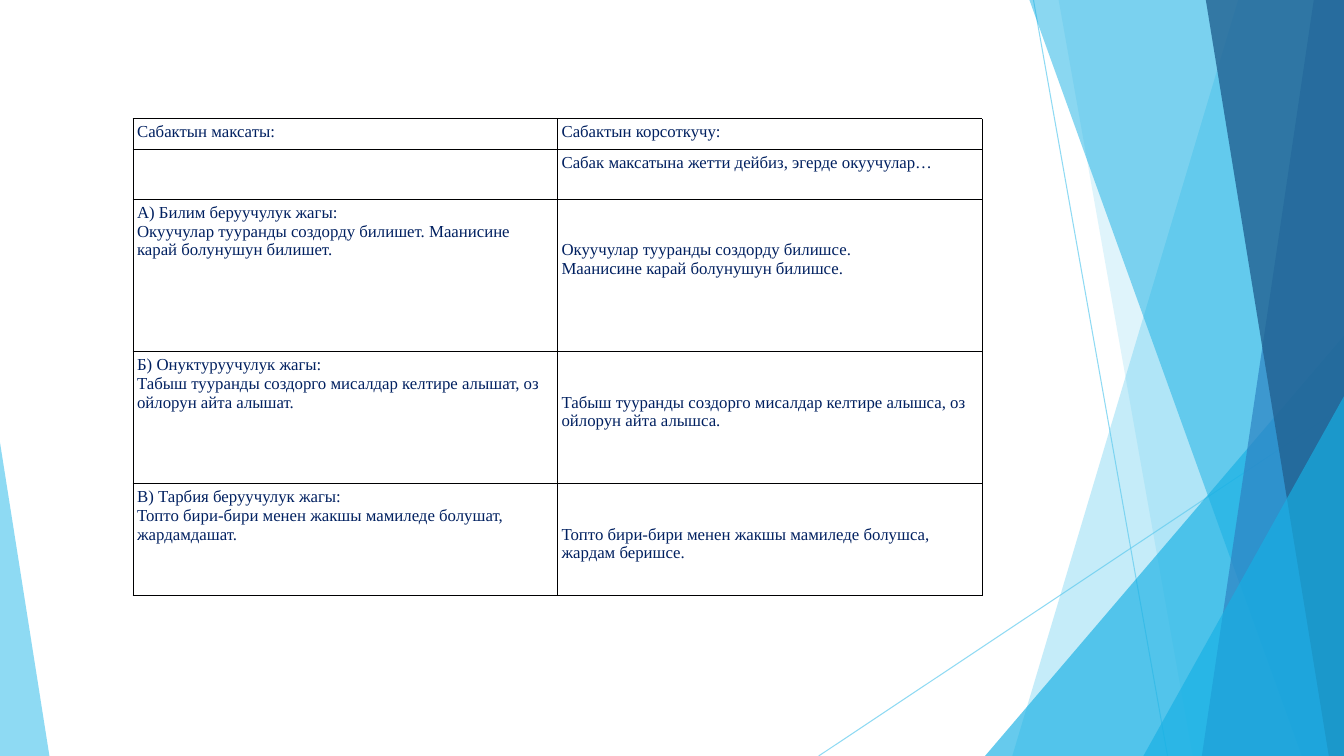
from lxml import etree
from pptx import Presentation
from pptx.dml.color import RGBColor
from pptx.enum.shapes import MSO_CONNECTOR, MSO_SHAPE
from pptx.oxml.ns import qn
from pptx.util import Inches, Pt

STRAIGHT = MSO_CONNECTOR.STRAIGHT
TRIANGLE = MSO_SHAPE.ISOSCELES_TRIANGLE
WIDTH, HEIGHT = 13.33, 7.5
SKY, CYAN, BLUE, NAVY = "5FCBEF", "17B0E4", "2E83C3", "226292"
CELL_MARGIN, LOWERED_MARGIN = 0.04, 0.41


def colour(value):
    return RGBColor.from_string(value)


class LessonSlide:
    font = "Times New Roman"
    size = Pt(12)
    ink = "002060"
    paper = "FFFFFF"
    border = "000001"

    def __init__(self, presentation):
        self.slide = presentation.slides.add_slide(presentation.slide_layouts[6])
        self.shapes = self.slide.shapes

    def set_opacity(self, shape, percent):
        for element in shape._element.spPr.iter(qn("a:srgbClr")):
            etree.SubElement(element, qn("a:alpha"), val=str(percent * 1000))

    def paint(self, shape, fill, opacity):
        shape.shadow.inherit = False
        shape.fill.solid()
        shape.fill.fore_color.rgb = colour(fill)
        shape.line.fill.background()
        self.set_opacity(shape, opacity)

    def ray(self, x1, y1, x2, y2):
        connector = self.shapes.add_connector(
            STRAIGHT, Inches(x1), Inches(y1), Inches(x2), Inches(y2))
        connector.line.color.rgb = colour(SKY)
        connector.line.width = Pt(0.75)
        self.set_opacity(connector, 70)
        etree.SubElement(connector._element.spPr, qn("a:effectLst"))

    def facet(self, top_x, bottom_x, fill, opacity):
        builder = self.shapes.build_freeform(Inches(top_x), 0)
        corners = [(WIDTH, 0), (WIDTH, HEIGHT), (bottom_x, HEIGHT)]
        builder.add_line_segments([(Inches(x), Inches(y)) for x, y in corners])
        self.paint(builder.convert_to_shape(), fill, opacity)

    def triangle(self, left, top, width, apex, fill, opacity):
        shape = self.shapes.add_shape(
            TRIANGLE, Inches(left), Inches(top), Inches(width), Inches(HEIGHT - top))
        shape.adjustments[0] = apex
        self.paint(shape, fill, opacity)

    def table(self, left, top, column_width, row_heights, rows):
        columns = len(rows[0])
        frame = self.shapes.add_table(
            len(rows), columns, Inches(left), Inches(top),
            Inches(column_width * columns), Inches(sum(row_heights)))
        table = frame.table
        table.first_row = table.horz_banding = False
        for column in table.columns:
            column.width = Inches(column_width)
        for row_index, (height, texts) in enumerate(zip(row_heights, rows)):
            table.rows[row_index].height = Inches(height)
            for column_index, lines in enumerate(texts):
                lowered = row_index > 1 and column_index == 1
                self.cell(table.cell(row_index, column_index), lines,
                          LOWERED_MARGIN if lowered else CELL_MARGIN)

    def cell(self, cell, lines, margin_top):
        cell.margin_left = cell.margin_right = cell.margin_bottom = Inches(CELL_MARGIN)
        cell.margin_top = Inches(margin_top)
        properties = cell._tc.get_or_add_tcPr()
        for side in ("lnL", "lnR", "lnT", "lnB"):
            line = etree.SubElement(properties, qn(f"a:{side}"), w=str(Pt(0.75)))
            fill = etree.SubElement(line, qn("a:solidFill"))
            etree.SubElement(fill, qn("a:srgbClr"), val=self.border)
        cell.fill.solid()
        cell.fill.fore_color.rgb = colour(self.paper)
        for index, text in enumerate(lines):
            text_frame = cell.text_frame
            paragraph = text_frame.add_paragraph() if index else text_frame.paragraphs[0]
            run = paragraph.add_run()
            run.text = text
            run.font.name = self.font
            run.font.size = self.size
            run.font.color.rgb = colour(self.ink)


ROW_HEIGHTS = [0.3, 0.5, 1.51, 1.31, 1.11]
LESSON_ROWS = [
    (["Сабактын максаты:"], ["Сабактын корсоткучу:"]),
    ([], ["Сабак максатына жетти дейбиз, эгерде окуучулар…"]),
    (["А) Билим беруучулук жагы:",
      "Окуучулар тууранды создорду билишет. Маанисине карай болунушун билишет."],
     ["Окуучулар тууранды создорду билишсе.",
      "Маанисине карай болунушун билишсе."]),
    (["Б) Онуктуруучулук жагы:",
      "Табыш тууранды создорго мисалдар келтире алышат, оз ойлорун айта алышат."],
     ["Табыш тууранды создорго мисалдар келтире алышса, оз ойлорун айта алышса."]),
    (["В) Тарбия беруучулук жагы:",
      "Топто бири-бири менен жакшы мамиледе болушат, жардамдашат."],
     ["Топто бири-бири менен жакшы мамиледе болушса, жардам беришсе."]),
]


def main():
    presentation = Presentation()
    presentation.slide_width = Inches(WIDTH)
    presentation.slide_height = Inches(HEIGHT)
    lesson = LessonSlide(presentation)
    lesson.ray(10.25, 0, 11.58, HEIGHT)
    lesson.ray(WIDTH, 4.03, 8.12, HEIGHT)
    lesson.facet(12.28, 10.04, SKY, 36)
    lesson.facet(10.5, 11.83, SKY, 20)
    lesson.triangle(9.77, 3.33, 3.56, 1, CYAN, 66)
    lesson.facet(10.21, 12.91, CYAN, 50)
    lesson.facet(13.03, 11.92, BLUE, 70)
    lesson.facet(11.96, 13.18, NAVY, 80)
    lesson.triangle(11.34, 3.93, 1.99, 1, CYAN, 66)
    lesson.triangle(0, 4.39, 0.49, 0, SKY, 70)
    lesson.table(1.32, 1.18, 4.21, ROW_HEIGHTS, LESSON_ROWS)
    presentation.save("out.pptx")


if __name__ == "__main__":
    main()
